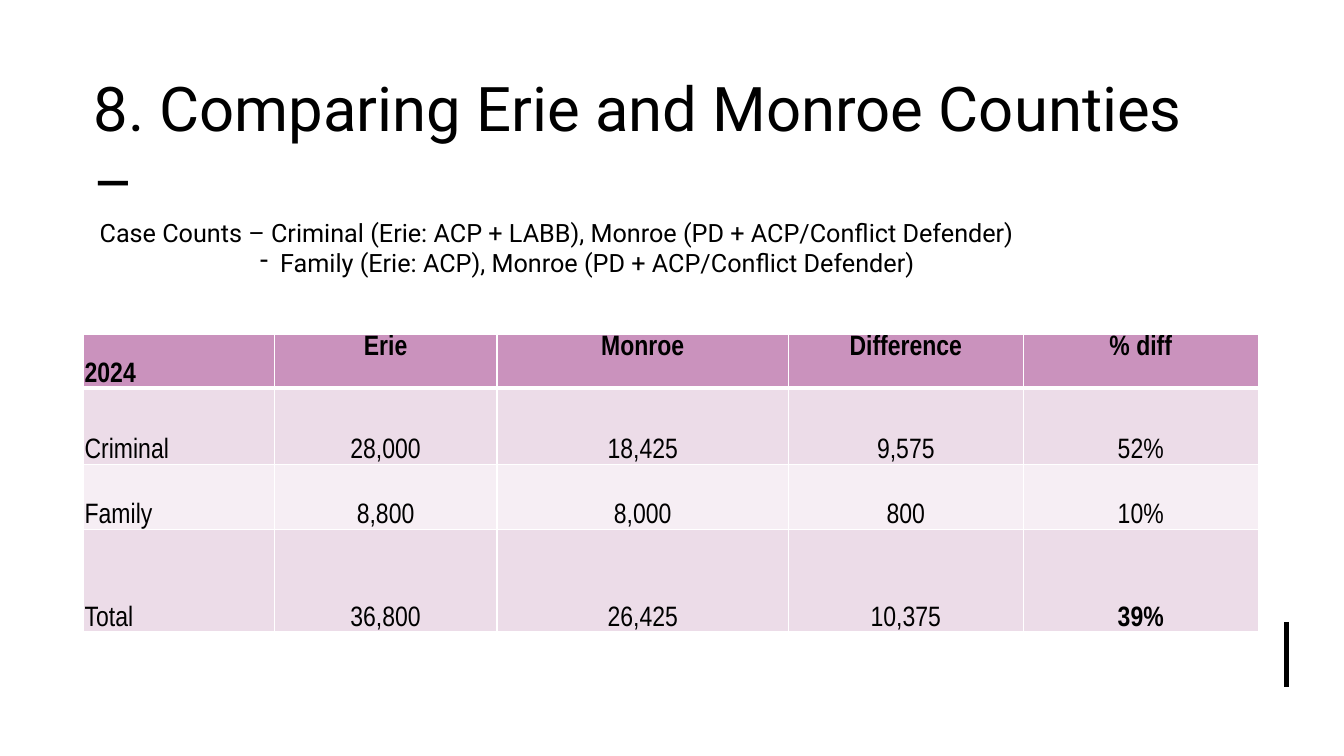
"""Build the slide comparing Erie and Monroe County case counts."""
from pptx import Presentation
from pptx.dml.color import RGBColor
from pptx.enum.shapes import MSO_CONNECTOR
from pptx.enum.text import MSO_ANCHOR, PP_ALIGN
from pptx.oxml.ns import qn
from pptx.util import Inches, Pt
from lxml import etree

STRAIGHT = MSO_CONNECTOR.STRAIGHT
TOP, MIDDLE, BOTTOM = MSO_ANCHOR.TOP, MSO_ANCHOR.MIDDLE, MSO_ANCHOR.BOTTOM
LEFT, CENTER = PP_ALIGN.LEFT, PP_ALIGN.CENTER
COLORS = {"text": "000000", "border": "FFFFFF", "header": "CA92BD",
          "odd": "ECDCE8", "even": "F6EEF4"}


def set_font(p, name, size, bold=False):
    p.font.name = name
    p.font.size = Pt(size)
    p.font.bold = bold
    p.font.color.rgb = RGBColor.from_string(COLORS["text"])


def add_border(cell, side, width):
    tcPr = cell._tc.get_or_add_tcPr()
    ln = etree.SubElement(tcPr, qn(f"a:ln{side}"), w=str(Pt(width)))
    fill = etree.SubElement(ln, qn("a:solidFill"))
    etree.SubElement(fill, qn("a:srgbClr"), val=COLORS["border"])


prs = Presentation()
prs.slide_width, prs.slide_height = Inches(13.33), Inches(7.5)
s = prs.slides.add_slide(prs.slide_layouts[6])

accent = s.shapes.add_connector(STRAIGHT, Inches(12.76), Inches(6.17),
                                Inches(12.76), Inches(6.82))
accent.line.color.rgb = RGBColor.from_string(COLORS["text"])
accent.line.width = Pt(3)
etree.SubElement(accent._element.spPr, qn("a:effectLst"))

title_lines = [
    ("8. Comparing Erie and Monroe Counties –", 44, 0, 0),
    ("Case Counts – Criminal (Erie: ACP + LABB), Monroe (PD + ACP/Conflict Defender)",
     18, 0.06, 0),
    ("Family (Erie: ACP), Monroe (PD + ACP/Conflict Defender)", 18, 1.85, -0.2),
]
title = s.shapes.add_textbox(Inches(0.83), Inches(0.94), Inches(11.35), Inches(1.57))
tf = title.text_frame
tf.word_wrap = True
tf.vertical_anchor = MIDDLE
for i, (text, size, margin, indent) in enumerate(title_lines):
    p = tf.add_paragraph() if i else tf.paragraphs[0]
    p.text = text
    set_font(p, "Roboto", size)
    pPr = p._p.get_or_add_pPr()
    pPr.set("marL", str(Inches(margin)))
    pPr.set("indent", str(Inches(indent)))
    if indent:
        bullet = etree.Element(qn("a:buChar"), char="-")
        pPr.insert(0, bullet)

rows = [
    ["2024", "Erie", "Monroe", "Difference", "% diff"],
    ["Criminal", "28,000", "18,425", "9,575", "52%"],
    ["Family", "8,800", "8,000", "800", "10%"],
    ["Total", "36,800", "26,425", "10,375", "39%"],
]
col_widths = [1.89, 2.21, 2.89, 2.33, 2.33]
row_heights = [0.53, 0.76, 0.64, 1.02]
row_fills = ["header", "odd", "even", "odd"]
table = s.shapes.add_table(len(rows), len(col_widths), Inches(0.83), Inches(3.32),
                           Inches(sum(col_widths)), Inches(sum(row_heights))).table
table.first_row = table.horz_banding = False
for column, width in zip(table.columns, col_widths):
    column.width = Inches(width)
for i, values in enumerate(rows):
    table.rows[i].height = Inches(row_heights[i])
    for j, value in enumerate(values):
        cell = table.cell(i, j)
        cell.margin_left = cell.margin_right = Inches(0.01)
        cell.margin_top = cell.margin_bottom = 0
        cell.vertical_anchor = TOP if i == 0 and j else BOTTOM
        for side in "LRTB":
            under_header = (i, side) in [(0, "B"), (1, "T")]
            add_border(cell, side, 3 if under_header else 1)
        cell.fill.solid()
        cell.fill.fore_color.rgb = RGBColor.from_string(COLORS[row_fills[i]])
        p = cell.text_frame.paragraphs[0]
        p.text = value
        p.alignment = CENTER if j else LEFT
        set_font(p, "Arial Narrow", 20, bold=i == 0 or value == "39%")

prs.save("out.pptx")
